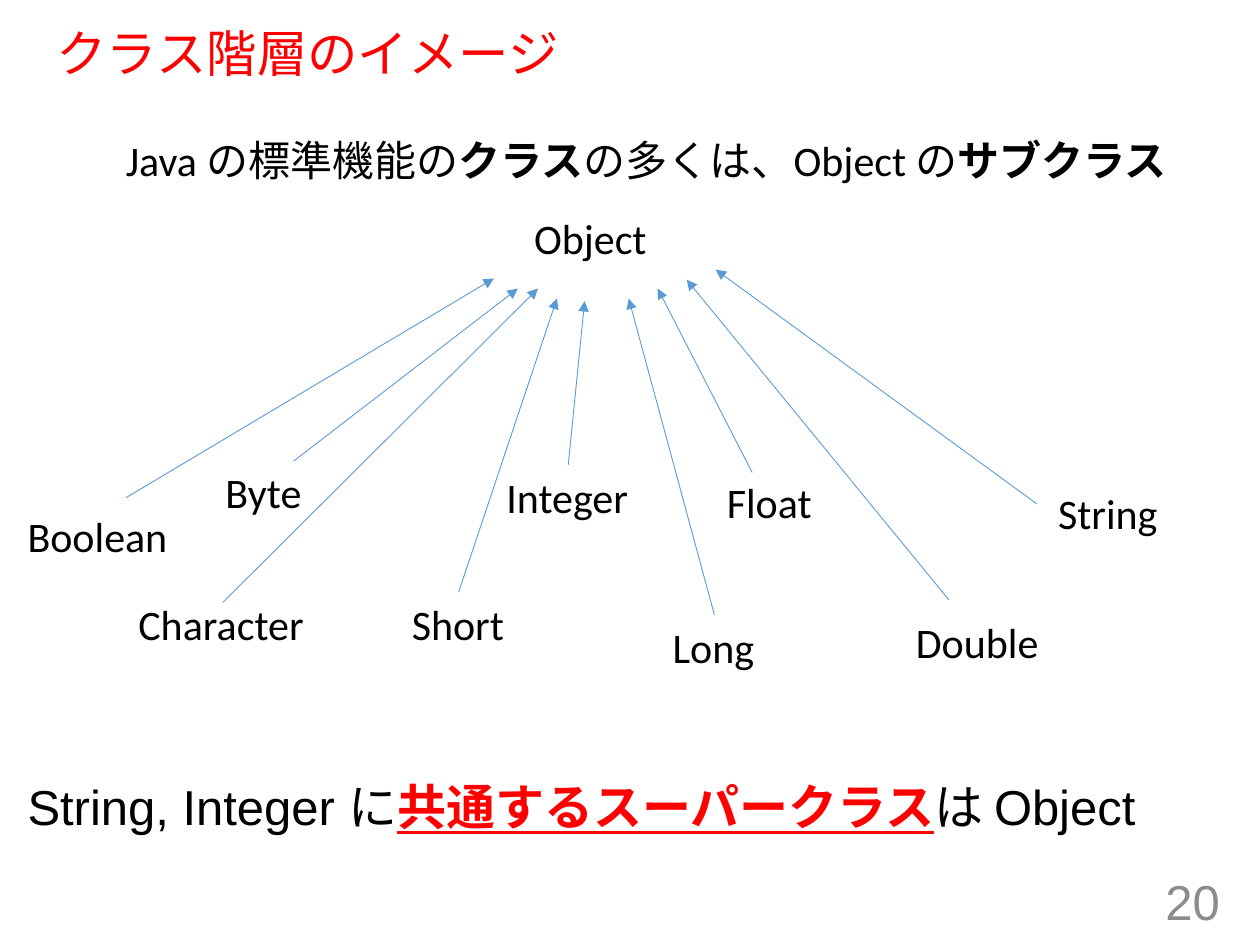
from pptx import Presentation
from pptx.dml.color import RGBColor
from pptx.enum.shapes import MSO_CONNECTOR
from pptx.enum.text import MSO_ANCHOR, MSO_AUTO_SIZE, PP_ALIGN
from pptx.oxml.ns import qn
from pptx.util import Inches, Pt
from lxml.etree import SubElement

BLACK, RED, GREY, BLUE = "000000", "FF0000", "8C8C8C", "5B9BD5"

CLASSES = [
    ("Boolean", (0.12, 4, 1.32, 0.5), (1, 3.95), (3.92, 2.21)),
    ("Character", (1, 4.7, 1.53, 0.5), (1.77, 4.78), (4.27, 2.29)),
    ("Byte", (1.69, 3.65, 0.81, 0.5), (2.33, 3.66), (4.11, 2.29)),
    ("Short", (3.17, 4.7, 0.94, 0.5), (3.64, 4.7), (4.42, 2.37)),
    ("Integer", (3.92, 3.69, 1.18, 0.5), (4.51, 3.69), (4.64, 2.39)),
    ("Long", (5.24, 4.88, 0.86, 0.5), (5.67, 4.88), (4.99, 2.37)),
    ("Float", (5.67, 3.73, 0.88, 0.5), (5.97, 3.75), (5.22, 2.29)),
    ("Double", (7.17, 4.84, 1.19, 0.5), (7.53, 4.76), (5.45, 2.22)),
    ("String", (8.3, 3.82, 1, 0.5), (8.23, 4), (5.68, 2.14)),
]


def rgb(value):
    return RGBColor.from_string(value)


def add_text(slide, box, runs, size, font, color=BLACK, anchor=MSO_ANCHOR.TOP, wrap=True):
    frame = slide.shapes.add_textbox(*map(Inches, box)).text_frame
    frame.word_wrap = wrap
    frame.auto_size = MSO_AUTO_SIZE.NONE if wrap else MSO_AUTO_SIZE.SHAPE_TO_FIT_TEXT
    frame.vertical_anchor = anchor
    paragraph = frame.paragraphs[0]
    for text, style in runs:
        run = paragraph.add_run()
        run.text = text
        run.font.size = Pt(size)
        run.font.name = font
        run.font.color.rgb = rgb(style.get("color", color))
        run.font.bold = style.get("bold", False)
        run.font.underline = style.get("underline", False)
    return paragraph


def add_title(slide, box):
    title = add_text(slide, box, [("クラス階層のイメージ", {})], 28.8, "Arial", RED,
                     MSO_ANCHOR.MIDDLE)
    title.line_spacing = 0.9


def add_lead(slide, box):
    bold = {"bold": True}
    add_text(slide, box, [
        ("Java の標準機能の", {}),
        ("クラス", bold),
        ("の多くは、Object の", {}),
        ("サブクラス", bold),
    ], 24, "Calibri")


def add_class_label(slide, box, name):
    add_text(slide, box, [(name, {})], 24, "Calibri", wrap=False)


def add_arrow(slide, start, end):
    arrow = slide.shapes.add_connector(MSO_CONNECTOR.STRAIGHT, *map(Inches, start + end))
    arrow.line.color.rgb = rgb(BLUE)
    arrow.line.width = Pt(0.5)
    SubElement(arrow.line._get_or_add_ln(), qn("a:tailEnd"), type="triangle")
    SubElement(arrow._element.spPr, qn("a:effectLst"))


def add_hierarchy(slide, root_box):
    add_class_label(slide, root_box, "Object")
    for name, box, start, end in CLASSES:
        add_class_label(slide, box, name)
        add_arrow(slide, start, end)


def add_conclusion(slide, box):
    add_text(slide, box, [
        ("String, Integer に", {}),
        ("共通するスーパークラス", {"color": RED, "bold": True, "underline": True}),
        ("は Object", {}),
    ], 28, "Arial")


def add_page_number(slide, box):
    number = add_text(slide, box, [("20", {})], 28, "Arial", GREY, MSO_ANCHOR.MIDDLE)
    number.alignment = PP_ALIGN.RIGHT


def main():
    deck = Presentation()
    deck.slide_width, deck.slide_height = Inches(10), Inches(7.5)
    slide = deck.slides.add_slide(deck.slide_layouts[6])
    add_title(slide, (0.35, 0.19, 9.25, 0.51))
    add_lead(slide, (0.9, 1.02, 8.67, 0.5))
    add_hierarchy(slide, (4.14, 1.64, 1.1, 0.5))
    add_conclusion(slide, (0.12, 6.11, 9.55, 0.69))
    add_page_number(slide, (7.53, 6.95, 2.25, 0.4))
    deck.save("out.pptx")


if __name__ == "__main__":
    main()
